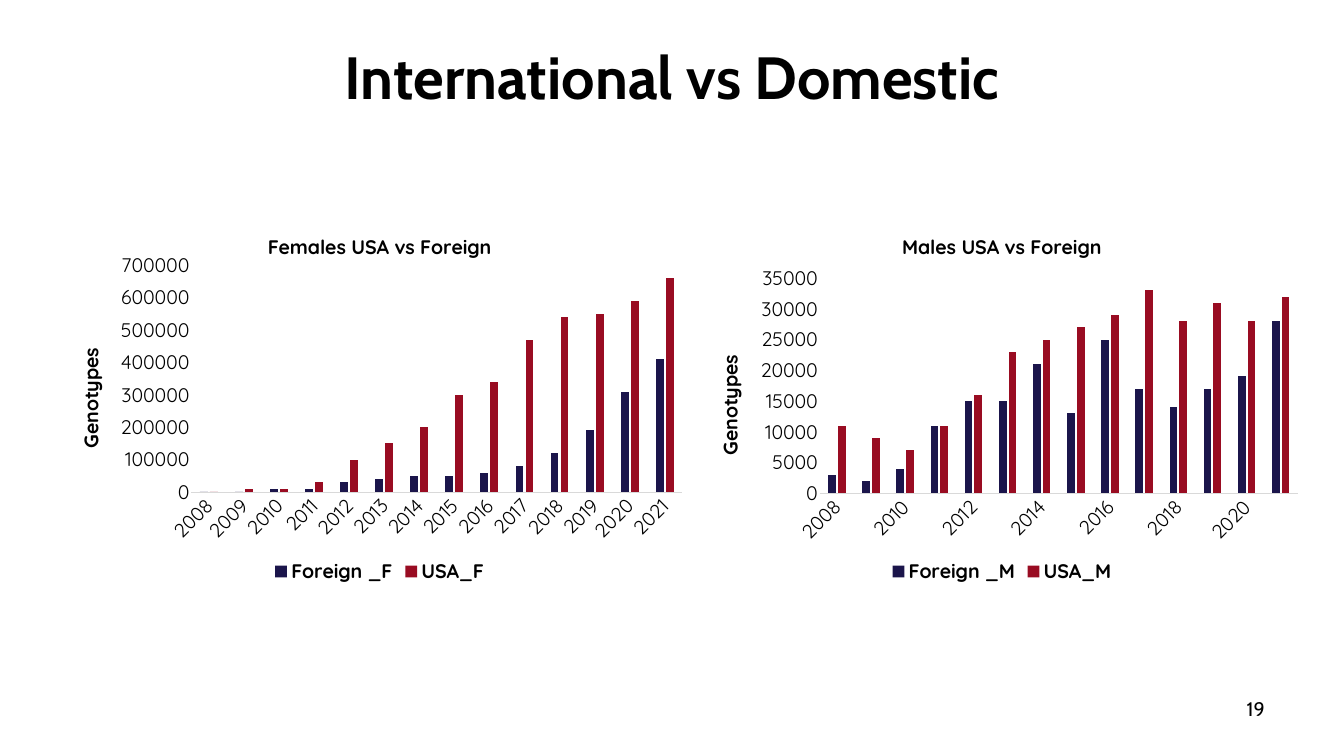
from pptx import Presentation
from pptx.chart.data import CategoryChartData
from pptx.dml.color import RGBColor
from pptx.enum.chart import XL_CHART_TYPE as ChartType, XL_LEGEND_POSITION as LegendPosition
from pptx.enum.chart import XL_TICK_MARK as TickMark
from pptx.enum.text import MSO_ANCHOR as Anchor, PP_ALIGN as Align
from pptx.oxml import parse_xml
from pptx.oxml.ns import nsdecls, qn
from pptx.util import Inches, Pt

BLACK = RGBColor(0x00, 0x00, 0x00)
NAVY = RGBColor(0x1B, 0x15, 0x4B)
RED = RGBColor(0x99, 0x0C, 0x22)
PALE_GRAY = RGBColor(0xD9, 0xD9, 0xD9)

WIDTH, HEIGHT = Inches(26.65), Inches(15)
YEARS = [str(year) for year in range(2008, 2022)]


class SlideBuilder:
    """Holds the style and the current slide; boxes are shares of the slide size."""

    heading_font = "Cabin"
    chart_font = "Quicksand"
    body_size = 28
    title_size = 85
    series_colors = (NAVY, RED)

    def __init__(self, deck):
        self.page = deck.slides.add_slide(deck.slide_layouts[5])

    def place(self, left, top, width, height):
        return (int(left * WIDTH), int(top * HEIGHT),
                int(width * WIDTH), int(height * HEIGHT))

    def style(self, font, name, size, bold=False):
        font.name, font.size, font.bold = name, Pt(size), bold
        font.color.rgb = BLACK

    def fill_text(self, box, text, size, align, anchor, bold=False):
        frame = box.text_frame
        frame.text = text
        frame.word_wrap = True
        frame.vertical_anchor = anchor
        frame.margin_left = frame.margin_right = Inches(0.24)
        frame.margin_top = frame.margin_bottom = Inches(0.12)
        para = frame.paragraphs[0]
        para.alignment = align
        self.style(para.runs[0].font, self.heading_font, size, bold)

    def title(self, text, area):
        box = self.page.shapes.title
        box.left, box.top, box.width, box.height = self.place(*area)
        self.fill_text(box, text, self.title_size, Align.CENTER, Anchor.BOTTOM, bold=True)

    def page_number(self, text, area):
        box = self.page.shapes.add_textbox(*self.place(*area))
        self.fill_text(box, text, self.body_size, Align.RIGHT, Anchor.MIDDLE)

    def chart_text(self, title, text):
        title.text_frame.text = text
        span = title.text_frame.paragraphs[0].runs[0]
        self.style(span.font, self.chart_font, self.body_size, bold=True)

    def rotate(self, element, degrees):
        body = element.find(".//" + qn("a:bodyPr"))
        body.set("rot", str(degrees * 60000))
        body.set("vert", "horz")

    def plot_layout(self, chart, shares):
        area = chart.plots[0]._element.getparent()
        for old in area.findall(qn("c:layout")):
            area.remove(old)
        sizes = "".join(f'<c:{tag} val="{share}"/>' for tag, share in zip("xywh", shares))
        area.insert(0, parse_xml(
            f'<c:layout {nsdecls("c")}><c:manualLayout><c:layoutTarget val="inner"/>'
            f'<c:xMode val="edge"/><c:yMode val="edge"/>{sizes}'
            '</c:manualLayout></c:layout>'))

    def column_chart(self, title, series, area, plot_area, maximum, step):
        data = CategoryChartData()
        data.categories = YEARS
        for name, values in series.items():
            data.add_series(name, values)
        chart = self.page.shapes.add_chart(
            ChartType.COLUMN_CLUSTERED, *self.place(*area), data).chart
        self.style(chart.font, self.chart_font, 10)
        chart.has_title = True
        self.chart_text(chart.chart_title, title)

        # Columns
        plot = chart.plots[0]
        plot.vary_by_categories = False
        plot.gap_width, plot.overlap = 219, -27
        for column, color in zip(plot.series, self.series_colors):
            column.format.fill.solid()
            column.format.fill.fore_color.rgb = color
        self.plot_layout(chart, plot_area)

        # Axes
        years, counts = chart.category_axis, chart.value_axis
        for axis in (years, counts):
            axis.has_major_gridlines = False
            axis.major_tick_mark = axis.minor_tick_mark = TickMark.NONE
            self.style(axis.tick_labels.font, self.chart_font, self.body_size)
        self.rotate(years._element.find(qn("c:txPr")), -45)
        years.format.line.color.rgb = PALE_GRAY
        years.format.line.width = Pt(0.75)
        counts.format.line.fill.background()
        counts.minimum_scale, counts.maximum_scale = 0, maximum
        counts.major_unit = step
        self.chart_text(counts.axis_title, "Genotypes")
        self.rotate(counts._element.find(qn("c:title")), -90)

        # Legend
        chart.has_legend = True
        chart.legend.position = LegendPosition.BOTTOM
        chart.legend.include_in_layout = False
        self.style(chart.legend.font, self.chart_font, self.body_size, bold=True)


def main():
    deck = Presentation()
    deck.slide_width, deck.slide_height = WIDTH, HEIGHT
    slide = SlideBuilder(deck)

    margin, chart_width, gap = 0.0544, 0.456, 0.007
    chart_top, chart_height = 0.29, 0.487

    slide.title("International vs Domestic", (margin, 0.036, 0.891, 0.119))

    # Females on the left, males on the right
    females = {
        "Foreign _F": [0, 0, 10000, 10000, 30000, 40000, 50000, 50000, 60000,
                       80000, 120000, 190000, 310000, 410000],
        "USA_F": [0, 10000, 10000, 30000, 100000, 150000, 200000, 300000, 340000,
                  470000, 540000, 550000, 590000, 660000],
    }
    males = {
        "Foreign _M": [3000, 2000, 4000, 11000, 15000, 15000, 21000, 13000, 25000,
                       17000, 14000, 17000, 19000, 28000],
        "USA_M": [11000, 9000, 7000, 11000, 16000, 23000, 25000, 27000, 29000,
                  33000, 28000, 31000, 28000, 32000],
    }
    charts = [
        ("Females USA vs Foreign", females, (0.193, 0.125, 0.801, 0.616), 700000, 100000),
        ("Males USA vs Foreign", males, (0.203, 0.16, 0.78, 0.584), 35000, 5000),
    ]
    for column, (title, series, plot_area, maximum, step) in enumerate(charts):
        left = margin + column * (chart_width + gap)
        slide.column_chart(title, series, (left, chart_top, chart_width, chart_height),
                           plot_area, maximum, step)

    slide.page_number("19", (0.717, 0.911, 0.233, 0.053))
    deck.save("out.pptx")


if __name__ == "__main__":
    main()
